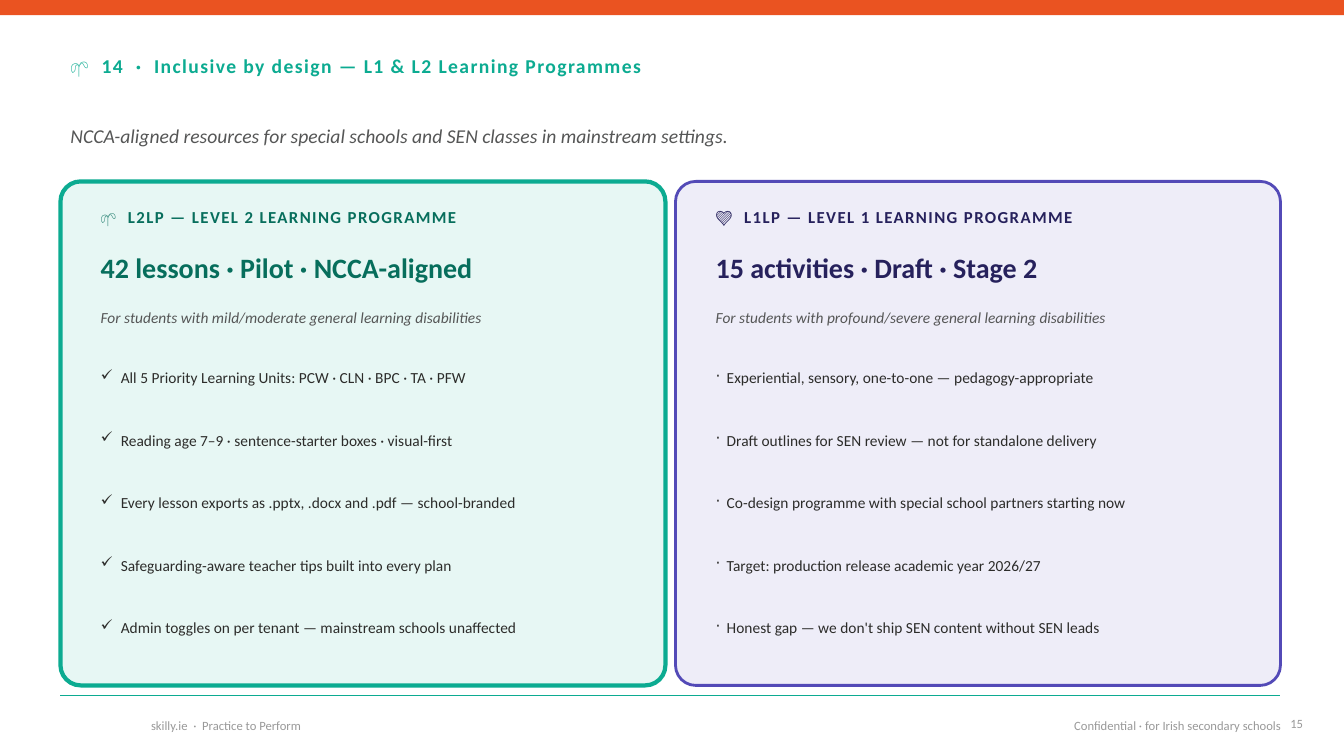
from lxml import etree
from pptx import Presentation
from pptx.dml.color import RGBColor
from pptx.enum.shapes import MSO_CONNECTOR as CONN, MSO_SHAPE as SHAPE
from pptx.enum.text import MSO_ANCHOR as ANCHOR, PP_ALIGN as ALIGN
from pptx.oxml.ns import qn
from pptx.util import Inches, Pt

W, H = 13.33, 7.5
MARGIN, CARD_W, CARD_H, GAP = 0.6, 6, 5, 0.1
TEAL, ORANGE, GREY, LIGHT_GREY, INK = "0CAB91", "EA5321", "555656", "999999", "2C2C2A"


def rgb(value):
    return RGBColor.from_string(value)


def add_box(s, shape, x, y, w, h, fill, line=None, weight=0):
    sp = s.shapes.add_shape(shape, Inches(x), Inches(y), Inches(w), Inches(h))
    sp.shadow.inherit = False
    sp.fill.solid()
    sp.fill.fore_color.rgb = rgb(fill)
    if line:
        sp.line.color.rgb = rgb(line)
        sp.line.width = Pt(weight)
    else:
        sp.line.fill.background()
    return sp


def add_text(s, text, x, y, w, h, size, color, bold=False, italic=False,
             spacing=0, align=ALIGN.LEFT, anchor=ANCHOR.MIDDLE):
    tf = s.shapes.add_textbox(Inches(x), Inches(y), Inches(w), Inches(h)).text_frame
    tf.word_wrap = True
    tf.vertical_anchor = anchor
    p = tf.paragraphs[0]
    p.text = text
    p.alignment = align
    r = p.runs[0]
    r.font.name, r.font.size = "Calibri", Pt(size)
    r.font.bold, r.font.italic = bold, italic
    r.font.color.rgb = rgb(color)
    if spacing:
        r.font._element.set("spc", str(spacing * 100))
    return p


def add_bullet(p, char, indent):
    pPr = p._p.get_or_add_pPr()
    pPr.set("marL", str(Inches(indent)))
    pPr.set("indent", str(-Inches(indent)))
    etree.SubElement(pPr, qn("a:buChar")).set("char", char)


def header(s, title, subtitle):
    add_box(s, SHAPE.RECTANGLE, 0, 0, W, 0.15, ORANGE)
    add_text(s, title, MARGIN, 0.4, 12, 0.5, 14, TEAL, bold=True, spacing=1)
    add_text(s, subtitle, MARGIN, 1.1, 12, 0.5, 14, GREY, italic=True)


def programme_card(s, x, y, w, h, card):
    sp = add_box(s, SHAPE.ROUNDED_RECTANGLE, x, y, w, h,
                 card["fill"], card["line"], card["weight"])
    sp.adjustments[0] = 0.04
    left, width = x + 0.3, w - 0.6

    # Label, headline and audience
    add_text(s, card["label"], left, y + 0.15, width, 0.4, 12, card["dark"],
             bold=True, spacing=1)
    add_text(s, card["headline"], left, y + 0.6, width, 0.5, 20, card["dark"], bold=True)
    add_text(s, card["audience"], left, y + 1.15, width, 0.4, 11, GREY, italic=True)

    # Bulleted points at an equal pitch
    for i, point in enumerate(card["points"]):
        p = add_text(s, point, left, y + 1.75 + i * 0.62, width, 0.55, 11, INK,
                     anchor=ANCHOR.TOP)
        p.line_spacing = 1.3
        add_bullet(p, card["bullet"], card["indent"])


def footer(s, left, right, number):
    rule = s.shapes.add_connector(CONN.STRAIGHT, Inches(MARGIN), Inches(6.9),
                                  Inches(MARGIN + 2 * CARD_W + GAP), Inches(6.9))
    rule.line.color.rgb = rgb(TEAL)
    rule.line.width = Pt(1)
    etree.SubElement(rule._element.spPr, qn("a:effectLst"))
    add_text(s, left, 1.4, 7.05, 7, 0.3, 9, LIGHT_GREY)
    add_text(s, right, 8.4, 7.05, 4.4, 0.3, 9, LIGHT_GREY, align=ALIGN.RIGHT)
    add_text(s, number, 12.7, 7.05, 0.5, 0.3, 9, LIGHT_GREY, anchor=ANCHOR.TOP)


CARDS = [
    dict(fill="E7F7F4", line=TEAL, weight=3, dark="076E5C", bullet="✓", indent=0.2,
         label="🌱  L2LP — LEVEL 2 LEARNING PROGRAMME",
         headline="42 lessons · Pilot · NCCA-aligned",
         audience="For students with mild/moderate general learning disabilities",
         points=["All 5 Priority Learning Units: PCW · CLN · BPC · TA · PFW",
                 "Reading age 7–9 · sentence-starter boxes · visual-first",
                 "Every lesson exports as .pptx, .docx and .pdf — school-branded",
                 "Safeguarding-aware teacher tips built into every plan",
                 "Admin toggles on per tenant — mainstream schools unaffected"]),
    dict(fill="EEEDF8", line="534AB7", weight=2, dark="26215C", bullet="·", indent=0.11,
         label="💜  L1LP — LEVEL 1 LEARNING PROGRAMME",
         headline="15 activities · Draft · Stage 2",
         audience="For students with profound/severe general learning disabilities",
         points=["Experiential, sensory, one-to-one — pedagogy-appropriate",
                 "Draft outlines for SEN review — not for standalone delivery",
                 "Co-design programme with special school partners starting now",
                 "Target: production release academic year 2026/27",
                 "Honest gap — we don't ship SEN content without SEN leads"]),
]


def main():
    prs = Presentation()
    prs.slide_width, prs.slide_height = Inches(W), Inches(H)
    s = prs.slides.add_slide(prs.slide_layouts[6])
    header(s, "🌱  14  ·  Inclusive by design — L1 & L2 Learning Programmes",
           "NCCA-aligned resources for special schools and SEN classes in mainstream settings.")
    for i, card in enumerate(CARDS):
        programme_card(s, MARGIN + i * (CARD_W + GAP), 1.8, CARD_W, CARD_H, card)
    footer(s, "skilly.ie  ·  Practice to Perform",
           "Confidential · for Irish secondary schools", "15")
    prs.save("out.pptx")


if __name__ == "__main__":
    main()
